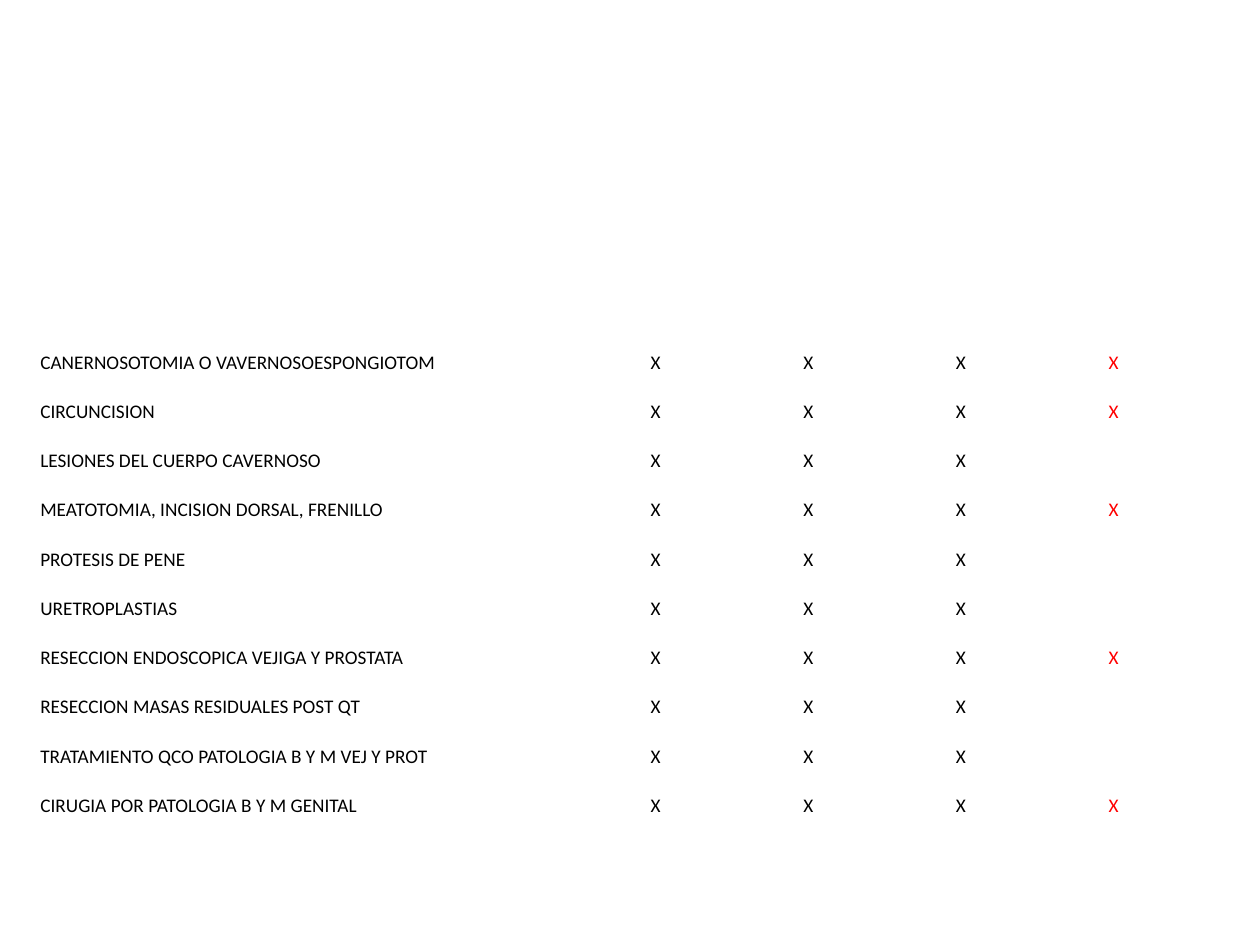
from pptx import Presentation
from pptx.dml.color import RGBColor as RGB
from pptx.enum.text import MSO_ANCHOR as ANCHOR, PP_ALIGN as ALIGN
from pptx.util import Inches, Pt

COLORS = {"text": "000000", "highlight": "FF0000"}
FONT, SIZE = "Calibri", 11
MARKS = 4
NAME_SHARE = 0.5
PROCEDURES = [
    ("CANERNOSOTOMIA O VAVERNOSOESPONGIOTOM", True),
    ("CIRCUNCISION", True),
    ("LESIONES DEL CUERPO CAVERNOSO", False),
    ("MEATOTOMIA, INCISION DORSAL, FRENILLO", True),
    ("PROTESIS DE PENE", False),
    ("URETROPLASTIAS", False),
    ("RESECCION ENDOSCOPICA VEJIGA Y PROSTATA", True),
    ("RESECCION MASAS RESIDUALES POST QT", False),
    ("TRATAMIENTO QCO PATOLOGIA B Y M VEJ Y PROT", False),
    ("CIRUGIA POR PATOLOGIA B Y M GENITAL", True),
]


def fill_cell(cell, text, color):
    """Write one unfilled, bottom-anchored cell."""
    cell.fill.background()
    cell.vertical_anchor = ANCHOR.BOTTOM
    cell.margin_left = cell.margin_right = cell.margin_top = Inches(0.01)
    cell.margin_bottom = 0
    cell.text = text
    p = cell.text_frame.paragraphs[0]
    p.alignment = ALIGN.LEFT
    for r in p.runs:
        r.font.name, r.font.size = FONT, Pt(SIZE)
        r.font.color.rgb = RGB.from_string(COLORS[color])


def add_procedure_table(s, left, top, width, height):
    """Place the procedures and their marks in the given box."""
    table = s.shapes.add_table(
        len(PROCEDURES), MARKS + 1, left, top, width, height
    ).table
    table.first_row = table.horz_banding = False
    name_width = int(width * NAME_SHARE)
    for i, column in enumerate(table.columns):
        column.width = (width - name_width) // MARKS if i else name_width
    for row, (name, last_mark) in zip(table.rows, PROCEDURES):
        row.height = height // len(PROCEDURES)
        texts = [name] + ["X"] * (MARKS - 1) + ["X" if last_mark else ""]
        for i, (cell, text) in enumerate(zip(row.cells, texts)):
            fill_cell(cell, text, "highlight" if i == MARKS else "text")


def main():
    """Build and save the slide."""
    prs = Presentation()
    prs.slide_width, prs.slide_height = Inches(10), Inches(7.5)
    s = prs.slides.add_slide(prs.slide_layouts[6])
    add_procedure_table(s, Inches(0.31), Inches(2.58), Inches(9.69), Inches(3.91))
    prs.save("out.pptx")


if __name__ == "__main__":
    main()
